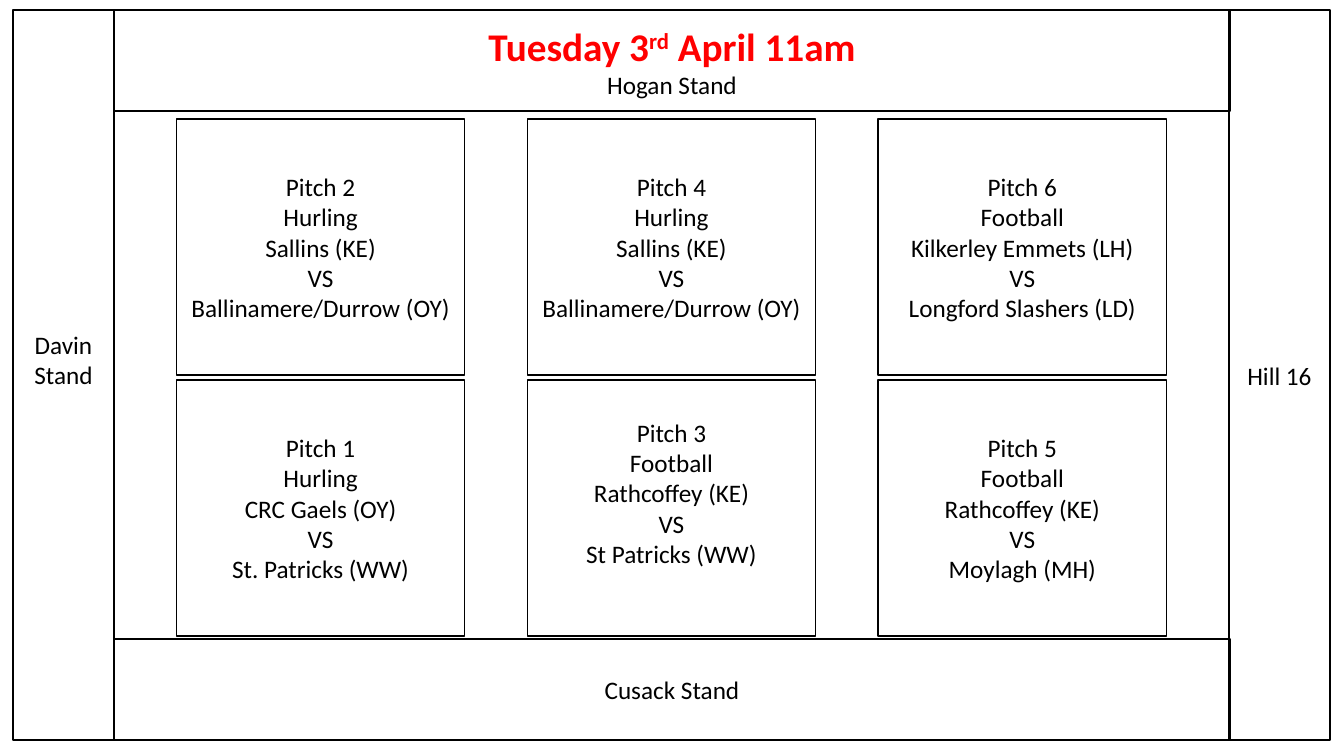
from pptx import Presentation
from pptx.dml.color import RGBColor
from pptx.enum.shapes import MSO_SHAPE as Shape
from pptx.enum.text import MSO_ANCHOR as Anchor, MSO_AUTO_SIZE as Fit, PP_ALIGN as Align
from pptx.util import Inches, Pt

# Content
DATE = [("Tuesday 3", False), ("rd", True), (" April 11am", False)]  # text, raised
TOP, BOTTOM, LEFT, RIGHT = "Hogan Stand", "Cusack Stand", "Davin Stand", "Hill 16"
PITCHES = [  # two rows: number, sport, home, away
    [(2, "Hurling", "Sallins (KE)", "Ballinamere/Durrow (OY)"),
     (4, "Hurling", "Sallins (KE)", "Ballinamere/Durrow (OY)"),
     (6, "Football", "Kilkerley Emmets (LH)", "Longford Slashers (LD)")],
    [(1, "Hurling", "CRC Gaels (OY)", "St. Patricks (WW)"),
     (3, "Football", "Rathcoffey (KE)", "St Patricks (WW)"),
     (5, "Football", "Rathcoffey (KE)", "Moylagh (MH)")],
]
RAISED = 3  # pitch whose text sits half a line higher

# Layout in inches
X, Y, WIDTH, HEIGHT, BAND = 0.13, 0.1, 13.06, 7.24, 1
INNER = WIDTH - 2 * BAND + 0.01
PITCH_X, PITCH_Y, PITCH_W, PITCH_H = 1.75, 1.18, 2.86, 2.54
STEP_X, STEP_Y = 3.48, 2.59
LINE = 0.3
BLACK, RED = "000000", "FF0000"


def color(code):
    return RGBColor.from_string(code)


def style(run, size=18, code=BLACK, bold=False):
    font = run.font
    font.name, font.size, font.bold = "Calibri", Pt(size), bold
    font.color.rgb = color(code)


def outline(shape):
    shape.fill.background()
    shape.line.color.rgb = color(BLACK)
    shape.line.width = Pt(1)


def box(text, x, y, w, h, lift=0):
    shape = slide.shapes.add_shape(
        Shape.RECTANGLE, Inches(x), Inches(y), Inches(w), Inches(h))
    shape.shadow.inherit = False
    outline(shape)
    frame = shape.text_frame
    frame.word_wrap = True
    frame.vertical_anchor = Anchor.MIDDLE
    frame.margin_bottom = Inches(0.05 + lift)
    frame.text = text
    for para in frame.paragraphs:
        para.alignment = Align.CENTER
        for run in para.runs:
            style(run)


deck = Presentation()
deck.slide_width, deck.slide_height = Inches(13.33), Inches(7.5)
slide = deck.slides.add_slide(deck.slide_layouts[5])

# Title band with the date and the top stand
title = slide.shapes.title
title.left, title.top = Inches(X + BAND), Inches(Y)
title.width, title.height = Inches(INNER), Inches(BAND)
outline(title)
frame = title.text_frame
frame.auto_size = Fit.NONE
frame.vertical_anchor = Anchor.MIDDLE
date = frame.paragraphs[0]
for text, raised in DATE:
    run = date.add_run()
    run.text = text
    style(run, 28, RED, True)
    if raised:
        run.font._element.set("baseline", "30000")
stand = frame.add_paragraph()
stand.text = TOP
style(stand.runs[0])
for para in frame.paragraphs:
    para.alignment = Align.CENTER

# Other stands around the field
box(LEFT, X, Y, BAND, HEIGHT, LINE)
box(RIGHT, X + WIDTH - BAND, Y, BAND, HEIGHT)
box(BOTTOM, X + BAND, Y + HEIGHT - BAND, INNER, BAND)

# Pitches
for i, row in enumerate(PITCHES):
    for j, (num, sport, home, away) in enumerate(row):
        text = "\n".join([f"Pitch {num}", sport, home, "VS", away])
        box(text, PITCH_X + j * STEP_X, PITCH_Y + i * STEP_Y, PITCH_W, PITCH_H,
            LINE if num == RAISED else 0)

deck.save("out.pptx")
